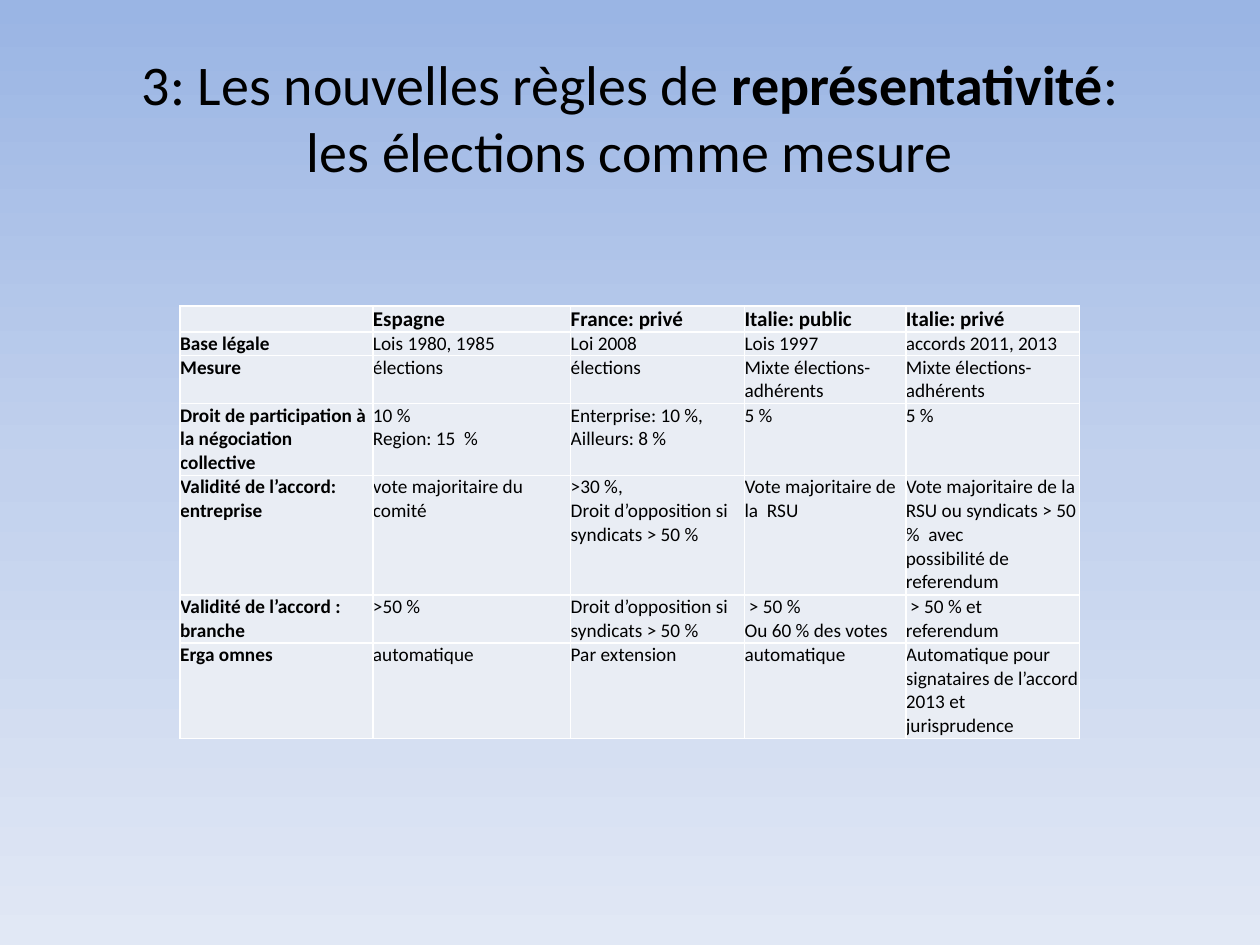
"""Build a slide comparing union representativeness rules in Spain, France and Italy."""
from dataclasses import dataclass
from typing import NamedTuple

from lxml.etree import SubElement
from pptx import Presentation
from pptx.dml.color import RGBColor
from pptx.enum.text import MSO_ANCHOR, MSO_AUTO_SIZE, PP_ALIGN
from pptx.oxml.ns import qn
from pptx.util import Inches, Pt


@dataclass(frozen=True)
class Theme:
    font: str = "Calibri"
    ink: str = "000000"
    cell: str = "E9EDF4"
    border: str = "FFFFFF"
    border_width: float = 1
    title_size: int = 32
    header_size: int = 12
    body_size: int = 11
    backdrop: tuple = ((0, "E1E8F5"), (50, "C2D1ED"), (100, "9AB5E4"))


class Rule(NamedTuple):
    topic: str
    spain: str
    france: str
    italy_public: str
    italy_private: str
    line_count: int
    right_inset: float = 0


THEME = Theme()
SLIDE_WIDTH, SLIDE_HEIGHT = Inches(10), Inches(7.5)
LINE_HEIGHT = Inches(0.19)
COLUMN_SHARES = (0.153, 0.157, 0.138, 0.128, 0.138)

RULES = (
    Rule("", "Espagne", "France: privé", "Italie: public", "Italie: privé", 1),
    Rule("Base légale", "Lois 1980, 1985", "Loi 2008", "Lois 1997", "accords 2011, 2013", 1),
    Rule("Mesure", "élections", "élections", "Mixte élections-adhérents",
         "Mixte élections-adhérents", 2),
    Rule("Droit de participation à la négociation collective", "10 %\nRegion: 15  %",
         "Enterprise: 10 %,\nAilleurs: 8 %", "5 %", "5 %", 3, right_inset=0.03),
    Rule("Validité de l’accord:\nentreprise", "vote majoritaire du comité",
         ">30 %,\nDroit d’opposition si syndicats > 50 %", "Vote majoritaire de la  RSU",
         "Vote majoritaire de la RSU ou syndicats > 50 %  avec\npossibilité de referendum", 5),
    Rule("Validité de l’accord : branche", ">50 %", "Droit d’opposition si syndicats > 50 %",
         " > 50 %\nOu 60 % des votes", " > 50 % et referendum", 2, right_inset=0.03),
    Rule("Erga omnes", "automatique", "Par extension", "automatique",
         "Automatique pour signataires de l’accord 2013 et  jurisprudence", 4),
)


def add_run(paragraph, text: str, size: int, bold: bool = False) -> None:
    """Append one styled run to a paragraph."""
    run = paragraph.add_run()
    run.text = text
    run.font.name = THEME.font
    run.font.size = Pt(size)
    run.font.bold = bold
    run.font.color.rgb = RGBColor.from_string(THEME.ink)


def paint_backdrop(slide) -> None:
    """Fill the background with the vertical theme gradient."""
    fill = slide.background.fill
    fill.gradient()
    fill.gradient_angle = 90
    stops = slide.element.find(".//" + qn("a:gsLst"))
    stops.clear()
    for percent, color in THEME.backdrop:
        stop = SubElement(stops, qn("a:gs"), pos=str(percent * 1000))
        SubElement(stop, qn("a:srgbClr"), val=color)


def write_title(title) -> None:
    """Place the title and write its two lines."""
    title.left, title.top = int(SLIDE_WIDTH * 0.05), int(SLIDE_HEIGHT * 0.04)
    title.width, title.height = int(SLIDE_WIDTH * 0.9), Inches(1.25)
    frame = title.text_frame
    frame.margin_left = frame.margin_right = frame.margin_top = frame.margin_bottom = 0
    frame.vertical_anchor = MSO_ANCHOR.MIDDLE
    frame.auto_size = MSO_AUTO_SIZE.NONE
    frame.word_wrap = True
    heading = frame.paragraphs[0]
    heading.alignment = PP_ALIGN.CENTER
    add_run(heading, "3: Les nouvelles règles de ", THEME.title_size)
    add_run(heading, "représentativité", THEME.title_size, bold=True)
    add_run(heading, ":", THEME.title_size)
    heading.add_line_break()
    add_run(heading, "les élections comme mesure", THEME.title_size)


def style_cell(cell, right_inset: float) -> None:
    """Give a cell its borders, fill and margins."""
    cell.margin_left = cell.margin_top = cell.margin_bottom = 0
    cell.margin_right = Inches(right_inset)
    properties = cell._tc.get_or_add_tcPr()
    for side in ("a:lnL", "a:lnR", "a:lnT", "a:lnB"):
        border = SubElement(properties, qn(side), w=str(Pt(THEME.border_width)))
        SubElement(SubElement(border, qn("a:solidFill")), qn("a:srgbClr"), val=THEME.border)
    cell.fill.solid()
    cell.fill.fore_color.rgb = RGBColor.from_string(THEME.cell)


def write_cell(cell, text: str, size: int, bold: bool) -> None:
    """Write one paragraph per line of text."""
    frame = cell.text_frame
    for index, line in enumerate(text.split("\n")):
        paragraph = frame.add_paragraph() if index else frame.paragraphs[0]
        if line:
            add_run(paragraph, line, size, bold)
        else:
            SubElement(paragraph._p, qn("a:endParaRPr"), sz=str(size * 100))


def add_rules_table(slide) -> None:
    """Draw the comparison table from the rules."""
    table = slide.shapes.add_table(
        len(RULES), len(COLUMN_SHARES),
        int(SLIDE_WIDTH * 0.143), int(SLIDE_HEIGHT * 0.324),
        int(SLIDE_WIDTH * sum(COLUMN_SHARES)),
        LINE_HEIGHT * sum(rule.line_count for rule in RULES),
    ).table
    table.first_row = table.horz_banding = False
    for column, share in zip(table.columns, COLUMN_SHARES):
        column.width = int(SLIDE_WIDTH * share)
    for row_index, (row, rule) in enumerate(zip(table.rows, RULES)):
        row.height = LINE_HEIGHT * rule.line_count
        is_header = row_index == 0
        size = THEME.header_size if is_header else THEME.body_size
        for column_index, (cell, text) in enumerate(zip(row.cells, rule)):
            style_cell(cell, rule.right_inset)
            write_cell(cell, text, size, is_header or column_index == 0)


def main() -> None:
    """Assemble and save the slide."""
    presentation = Presentation()
    presentation.slide_width, presentation.slide_height = SLIDE_WIDTH, SLIDE_HEIGHT
    slide = presentation.slides.add_slide(presentation.slide_layouts.get_by_name("Title Only"))
    paint_backdrop(slide)
    write_title(slide.shapes.title)
    add_rules_table(slide)
    presentation.save("out.pptx")


if __name__ == "__main__":
    main()
